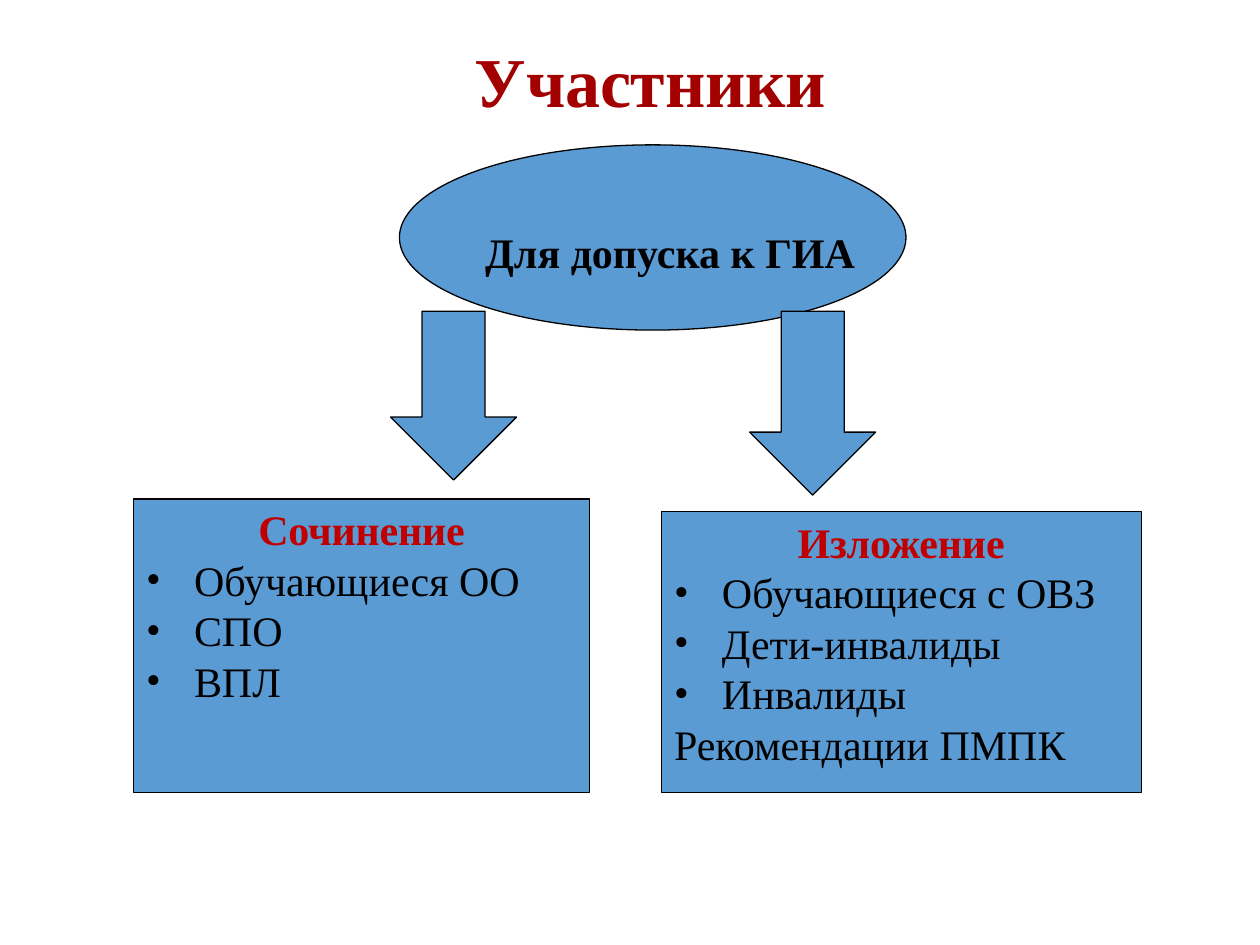
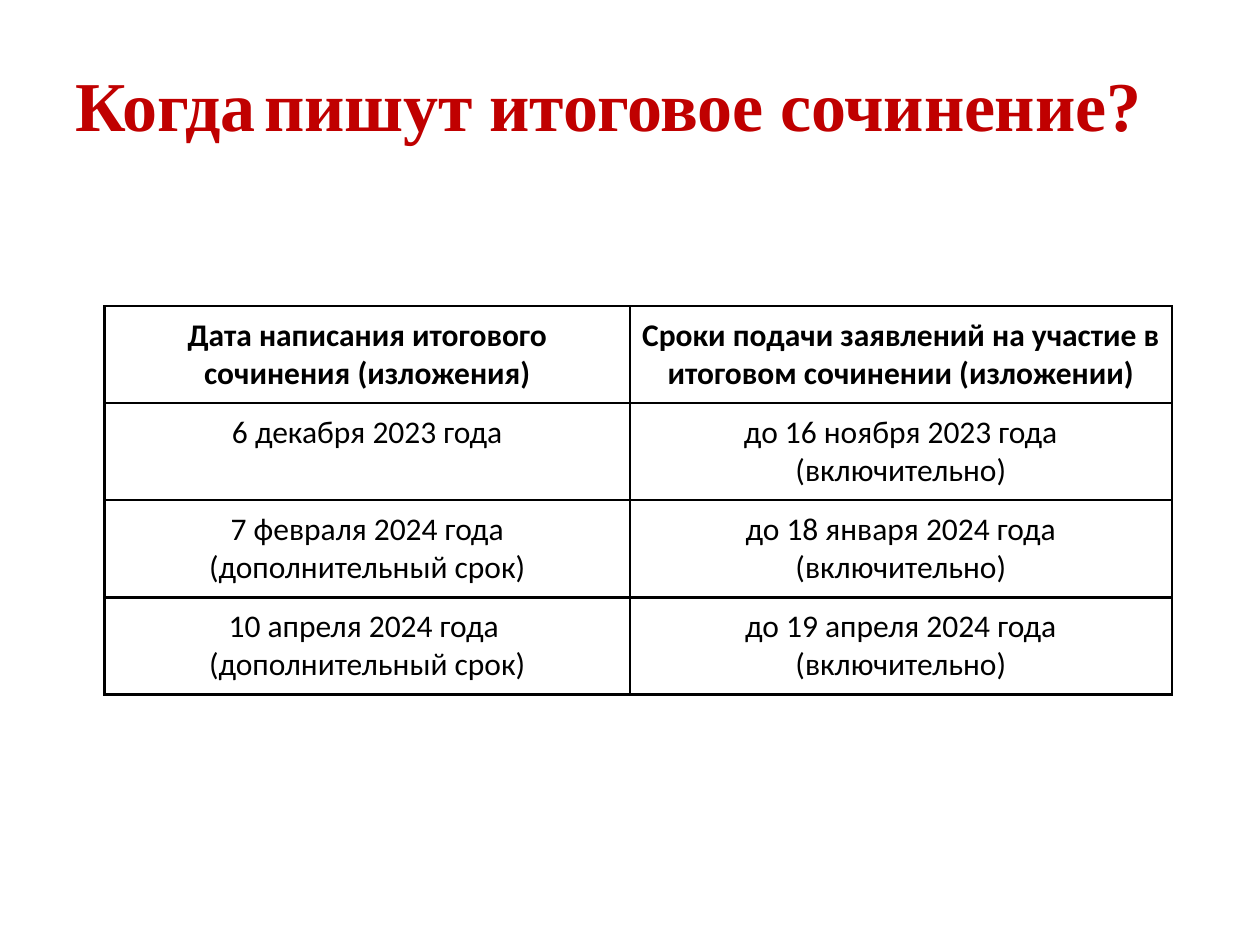
"""Builds two slides on who writes the final essay and when."""
import pptx
import pptx.util
import pptx.dml.color
import pptx.enum.shapes
import pptx.enum.text
import lxml.etree
import pptx.oxml.ns

SERIF, SANS = "Times New Roman", "Calibri"
BLACK, WHITE, BLUE, RED, DARK_RED = "000000", "FFFFFF", "5B9BD4", "C00000", "A30000"
ALIGN = pptx.enum.text.PP_ALIGN
FIGURE = pptx.enum.shapes.MSO_SHAPE
qn = pptx.oxml.ns.qn


def rgb(code):
    """Turn a hex string into a colour."""
    return pptx.dml.color.RGBColor.from_string(code)


def write(frame, text, font=SERIF, size=24, color=BLACK, bold=False, align=ALIGN.LEFT,
          before=0, after=0, indent=0, hang=0, bullet=None, tab=None, tracking=0,
          margins=(0, 0.01, 0, 0)):
    """Add one formatted paragraph to a text frame."""
    frame.word_wrap = True
    frame.vertical_anchor = pptx.enum.text.MSO_ANCHOR.TOP
    (frame.margin_left, frame.margin_top, frame.margin_right,
     frame.margin_bottom) = (pptx.util.Inches(margin) for margin in margins)
    paragraph = frame.paragraphs[0] if not frame.text else frame.add_paragraph()
    paragraph.text = text.replace("\n", "\v")
    paragraph.alignment = align
    paragraph.space_before = pptx.util.Pt(before)
    paragraph.space_after = pptx.util.Pt(after)
    properties = paragraph._p.get_or_add_pPr()
    properties.set("marL", str(pptx.util.Inches(indent)))
    properties.set("indent", str(pptx.util.Inches(hang)))
    if bullet:
        lxml.etree.SubElement(properties, qn("a:buFont"), typeface=SERIF)
        lxml.etree.SubElement(properties, qn("a:buChar"), char=bullet)
    if tab:
        stops = lxml.etree.SubElement(properties, qn("a:tabLst"))
        lxml.etree.SubElement(stops, qn("a:tab"), pos=str(pptx.util.Inches(tab)), algn="l")
    for run in paragraph.runs:
        run.font.name, run.font.size, run.font.bold = font, pptx.util.Pt(size), bold
        run.font.color.rgb = rgb(color)
        run._r.get_or_add_rPr().set("spc", str(tracking))


deck = pptx.Presentation()
deck.slide_width, deck.slide_height = pptx.util.Inches(10), pptx.util.Inches(7.5)
unit = deck.slide_width // 100

slides = []
for heading, color, tab, area in (
    ("Участники", DARK_RED, None, (37.6, 2.9, 28.3, 6.9)),
    ("Когда\tпишут итоговое сочинение?", RED, 1.73, (5.9, 4.8, 88, 6.9)),
):
    slide = deck.slides.add_slide(deck.slide_layouts[5])
    title = slide.shapes.title
    title.left, title.top, title.width, title.height = (int(n * unit) for n in area)
    title.text_frame.auto_size = pptx.enum.text.MSO_AUTO_SIZE.NONE
    write(title.text_frame, heading, size=40, color=color, bold=True,
          before=0.9, indent=0.01, tab=tab, tracking=-10)
    slides.append(slide)
participants, schedule = slides

scheme = []
for figure, area in (
    (FIGURE.OVAL, (31.7, 11.5, 40.2, 14.7)),
    (FIGURE.DOWN_ARROW, (31, 24.7, 10, 13.4)),
    (FIGURE.DOWN_ARROW, (59.5, 24.7, 10, 14.6)),
    (FIGURE.RECTANGLE, (10.6, 39.6, 36.2, 23.3)),
    (FIGURE.RECTANGLE, (52.5, 40.6, 38.1, 22.3)),
):
    shape = participants.shapes.add_shape(figure, *(int(n * unit) for n in area))
    shape.shadow.inherit = False
    shape.fill.solid()
    shape.fill.fore_color.rgb = rgb(BLUE)
    shape.line.color.rgb = rgb(BLACK)
    shape.line.width = pptx.util.Pt(0.75)
    scheme.append(shape)

purpose = participants.shapes.add_textbox(*(int(n * unit) for n in (38.4, 17.9, 30.5, 4.3)))
write(purpose.text_frame, "Для допуска к ГИА", bold=True, before=1, indent=0.01)

for box, work, indent, groups, note in (
    (scheme[3], "Сочинение", 0.99, ("Обучающиеся ОО", "СПО", "ВПЛ"), None),
    (scheme[4], "Изложение", 1.08,
     ("Обучающиеся с ОВЗ", "Дети-инвалиды", "Инвалиды"), "Рекомендации ПМПК"),
):
    inset = (0, 0.04, 0, 0)
    write(box.text_frame, work, color=RED, bold=True, before=2.8, indent=indent,
          tracking=-10, margins=inset)
    for group in groups:
        write(box.text_frame, group, indent=0.48, hang=-0.38, bullet="•", margins=inset)
    if note:
        write(box.text_frame, note, indent=0.1, margins=inset)

dates = (
    ("Дата написания итогового сочинения (изложения)",
     "Сроки подачи заявлений на участие в итоговом сочинении (изложении)"),
    ("6 декабря 2023 года", "до 16 ноября 2023 года (включительно)"),
    ("7 февраля 2024 года\n(дополнительный срок)", "до 18 января 2024 года (включительно)"),
    ("10 апреля 2024 года \n(дополнительный срок)", "до 19 апреля 2024 года (включительно)"),
)
table = schedule.shapes.add_table(
    len(dates), 2, *(int(n * unit) for n in (8.3, 24.3, 84.7, 30.7))).table
table.first_row = table.horz_banding = False
for column, width in zip(table.columns, (41.7, 43)):
    column.width = int(width * unit)
for row, entries in enumerate(dates):
    for column, entry in enumerate(entries):
        cell = table.cell(row, column)
        write(cell.text_frame, entry, font=SANS, size=18, bold=row == 0,
              align=ALIGN.CENTER, after=10)
        cell.margin_left = cell.margin_right = pptx.util.Inches(0.08)
        cell.margin_top = cell.margin_bottom = pptx.util.Inches(0.08)
        borders = cell._tc.get_or_add_tcPr()
        for side in ("a:lnL", "a:lnR", "a:lnT", "a:lnB"):
            border = lxml.etree.SubElement(borders, qn(side), w=str(pptx.util.Pt(1.5)))
            stroke = lxml.etree.SubElement(border, qn("a:solidFill"))
            lxml.etree.SubElement(stroke, qn("a:srgbClr"), val=BLACK)
        cell.fill.solid()
        cell.fill.fore_color.rgb = rgb(WHITE)

deck.save("out.pptx")
